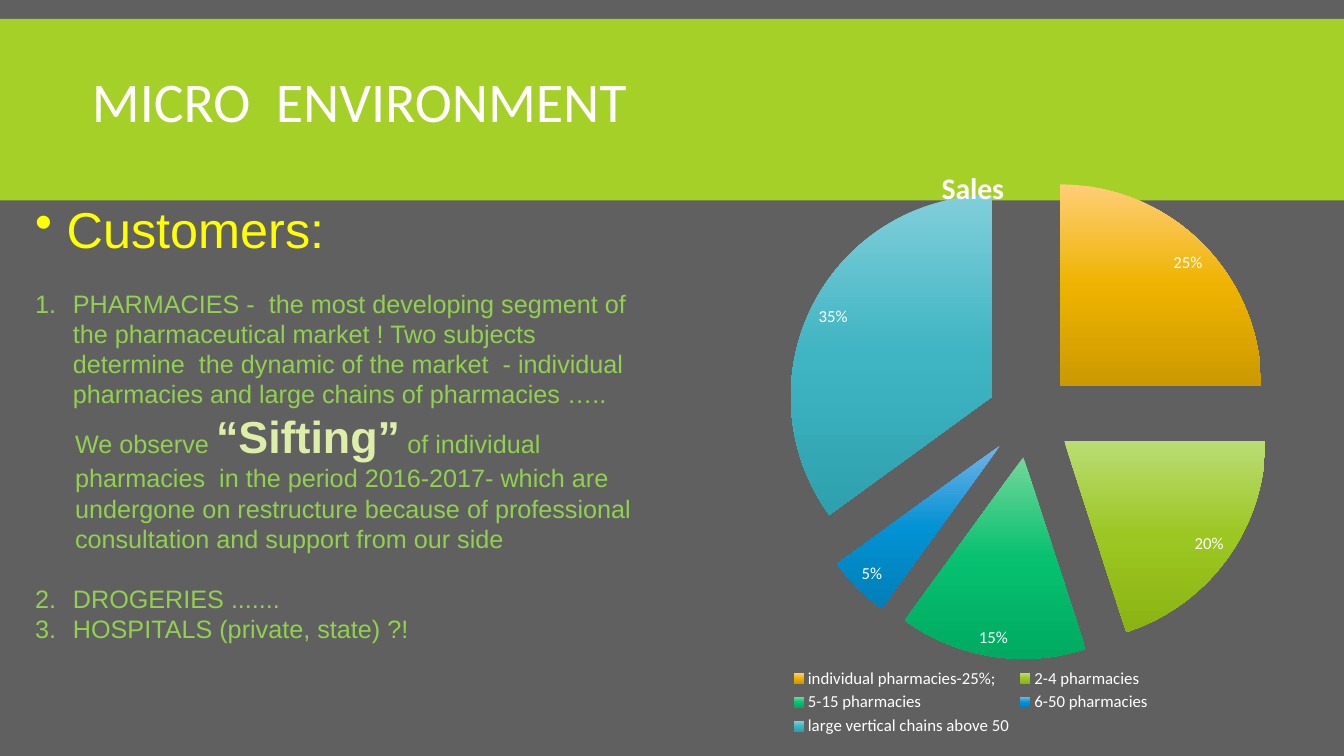
from copy import deepcopy

from pptx import Presentation, util as u
from pptx.chart.data import CategoryChartData
from pptx.dml.color import RGBColor
from pptx.enum import chart as ch, shapes, text
from pptx.oxml import parse_xml
from pptx.oxml.ns import nsdecls, qn

GREEN, LIME, YELLOW, WHITE = "92D050", "A5D028", "FFFF00", "FFFFFF"

SALES = [
    ("individual pharmacies-25%; ", 0.25, ("FFCE77", "EEB300", "CC9A00")),
    ("2-4 pharmacies ", 0.20, ("BADD75", "9CC621", "8BB413")),
    ("5-15 pharmacies ", 0.15, ("72D79A", "07C070", "00AB61")),
    ("6-50 pharmacies ", 0.05, ("72B3E8", "0392D3", "007FB8")),
    ("large vertical chains above 50", 0.35, ("80CFDA", "3FB4C2", "2EA1AF")),
]


def px(n):
    return u.Emu(n * 9525)


def rgb(value):
    return RGBColor.from_string(value)


def xml(tag, attrs="", inner=""):
    return parse_xml(f"<{tag} {nsdecls('a', 'c')} {attrs}>{inner}</{tag}>")


class Deck:
    """Holds the style and the current slide, with a method per kind of element."""

    def __init__(self, background):
        self.prs = Presentation()
        self.prs.slide_width, self.prs.slide_height = px(1280), px(720)
        self.s = self.prs.slides.add_slide(self.prs.slide_layouts[5])
        fill = self.s.background.fill
        fill.solid()
        fill.fore_color.rgb = rgb(background)

    def font(self, f, size, color, name="Calibri", bold=False):
        f.size, f.name, f.bold = u.Pt(size), name, bold
        f.color.rgb = rgb(color)

    def band(self, x, y, w, h, color):
        sp = self.s.shapes.add_shape(shapes.MSO_SHAPE.RECTANGLE, px(x), px(y), px(w), px(h))
        sp.shadow.inherit = False
        sp.fill.solid()
        sp.fill.fore_color.rgb = rgb(color)
        sp.line.fill.background()
        self.s.shapes.title._element.addprevious(sp._element)

    def title(self, x, y, w, h, words):
        sp = self.s.shapes.title
        sp.left, sp.top, sp.width, sp.height = px(x), px(y), px(w), px(h)
        tf = sp.text_frame
        tf.text, tf.vertical_anchor = words, text.MSO_ANCHOR.MIDDLE
        p = tf.paragraphs[0]
        p.alignment, p.line_spacing = text.PP_ALIGN.LEFT, 0.85
        self.font(p.font, 40, WHITE)

    def textbox(self, x, y, w, h):
        tf = self.s.shapes.add_textbox(px(x), px(y), px(w), px(h)).text_frame
        tf.word_wrap = True
        return tf

    def paragraph(self, p, words, size=18, color=GREEN, margin=36, hang=36,
                  bullet=None, number=None, before=0):
        p.space_before = u.Pt(before)
        self.font(p.font, size, color, "Arial")
        pPr = p._p.get_or_add_pPr()
        pPr.set("marL", str(px(margin)))
        pPr.set("indent", str(-px(hang)))
        mark = None
        if bullet:
            mark = xml("a:buChar", f'char="{bullet}"')
        elif number:
            mark = xml("a:buAutoNum", f'type="arabicPeriod" startAt="{number}"')
        if mark is not None:
            pPr.find(qn("a:defRPr")).addprevious(mark)
        for part in words:
            r = p.add_run()
            r.text = part
            self.font(r.font, size, color, "Arial")
        return p

    def pie(self, x, y, w, h, name, rows, layout, explosion):
        data = CategoryChartData(number_format="0%")
        data.categories = [row[0] for row in rows]
        data.add_series(name, [row[1] for row in rows])
        chart = self.s.shapes.add_chart(ch.XL_CHART_TYPE.PIE, px(x), px(y), px(w), px(h), data).chart
        self.font(chart.font, 10, WHITE)
        chart.has_title = True
        chart.chart_title.text_frame.text = name
        self.font(chart.chart_title.text_frame.paragraphs[0].font, 21.3, WHITE, bold=True)
        chart.has_legend = True
        chart.legend.position = ch.XL_LEGEND_POSITION.BOTTOM
        chart.legend.include_in_layout = True
        self.font(chart.legend.font, 12, WHITE)

        plot = chart.plots[0]
        plot.vary_by_categories = True
        plot.has_data_labels = True
        labels = plot.data_labels
        labels.show_value, labels.show_percentage = True, False
        labels.number_format, labels.number_format_is_linked = "0%", False
        labels.position = ch.XL_LABEL_POSITION.BEST_FIT
        self.font(labels.font, 12, WHITE)

        ser = plot.series[0]
        for i, (_, _, colors) in enumerate(rows):
            self.gradient(ser, i, colors)
        ser._element.find(qn("c:dPt")).addprevious(xml("c:explosion", f'val="{explosion}"'))

        area = chart._chartSpace.chart.plotArea
        for old in area.findall(qn("c:layout")):
            area.remove(old)
        keys = [f'<c:{k}Mode val="edge"/>' for k in "xy"]
        keys += [f'<c:{k} val="{v}"/>' for k, v in zip("xywh", layout)]
        inner = '<c:layoutTarget val="inner"/>' + "".join(keys)
        area.insert(0, xml("c:layout", inner=f"<c:manualLayout>{inner}</c:manualLayout>"))

    def gradient(self, ser, i, colors):
        fill = ser.points[i].format.fill
        fill.gradient()
        fill.gradient_angle = 270
        stops = ser._element.findall(qn("c:dPt"))[i].find(".//" + qn("a:gsLst"))
        stops.append(deepcopy(stops[0]))
        for stop, position, color in zip(fill.gradient_stops, (0, 0.5, 1), colors):
            stop.position = position
            stop.color.rgb = rgb(color)


def main():
    d = Deck("606060")
    d.band(0, 18, 1280, 173, LIME)
    d.title(78, 21, 1027, 158, "MICRO  ENVIRONMENT")

    tf = d.textbox(24, 184, 609, 440)
    d.paragraph(tf.paragraphs[0], ["Customers:"], 36, YELLOW, 30, 30, bullet="•")
    d.paragraph(tf.add_paragraph(), [
        "PHARMACIES -  the most developing segment of the pharmaceutical market ! "
        "Two subjects determine  the dynamic of the market  - individual pharmacies "
        "and large chains of pharmacies ….."], number=1, before=21)
    p = d.paragraph(tf.add_paragraph(), [
        "We observe ", "“Sifting”",
        " of individual pharmacies  in the period 2016-2017- which are undergone on "
        "restructure because of professional consultation and support from our side"],
        margin=38, hang=0)
    d.font(p.runs[1].font, 32, "DCEEA7", "Arial", True)
    d.paragraph(tf.add_paragraph(), ["DROGERIES ......."], number=2, before=21)
    d.paragraph(tf.add_paragraph(), ["HOSPITALS (private, state) ?!"], number=2)

    d.pie(640, 138, 573, 567, "Sales", SALES, (0.19, 0.03, 0.81, 0.85), 21)
    d.prs.save("out.pptx")


if __name__ == "__main__":
    main()
